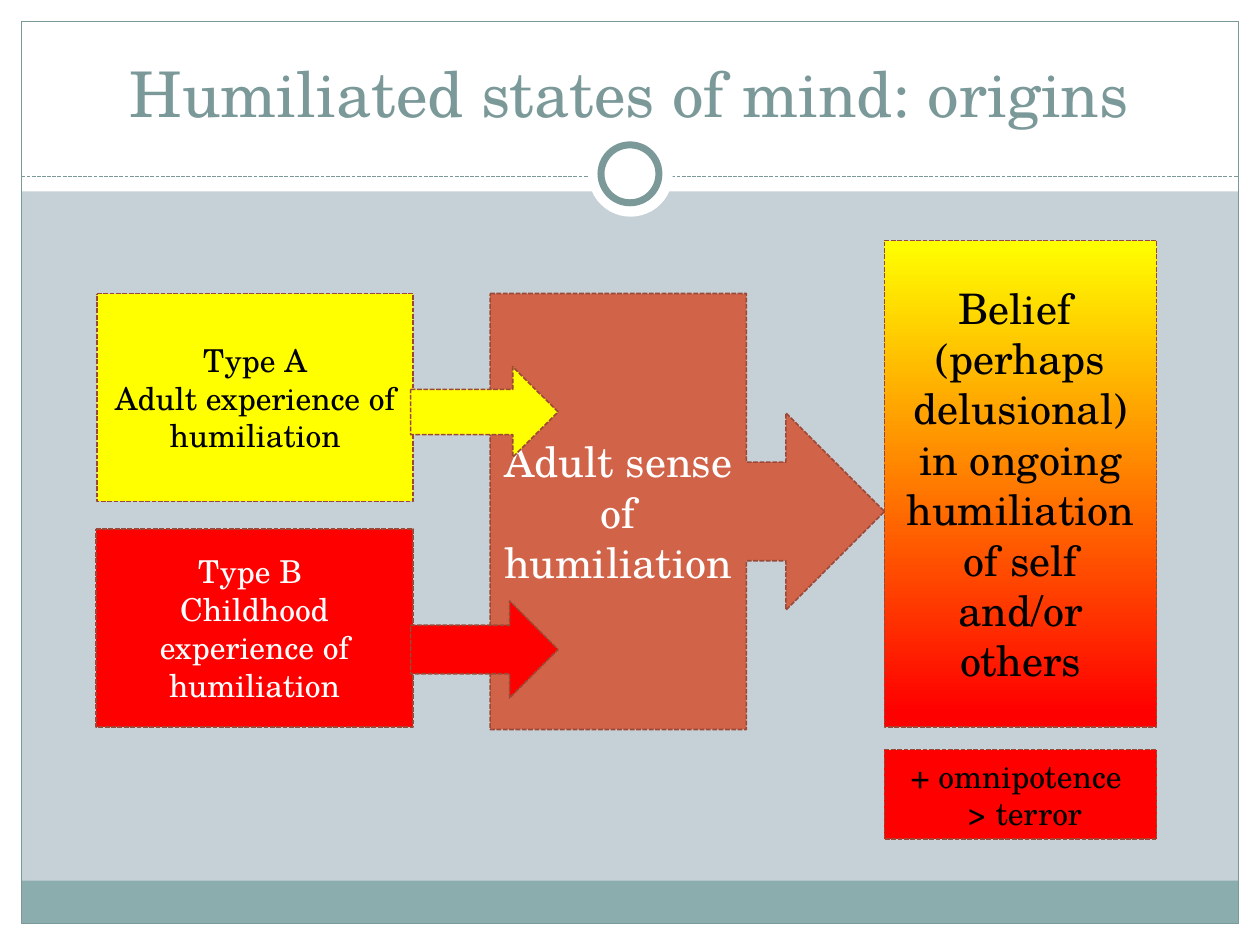
from lxml import etree
from pptx import Presentation
from pptx.dml.color import RGBColor as Rgb
from pptx.enum.dml import MSO_LINE as Dash
from pptx.enum.shapes import MSO_CONNECTOR as Conn, MSO_SHAPE as Geo
from pptx.enum.text import MSO_ANCHOR as Anchor, PP_ALIGN as Align
from pptx.oxml.ns import qn
from pptx.util import Inches, Pt

FONT = "TeX Gyre Schola"
COLORS = {
    "back": "C5D1D7", "white": "FFFFFF", "black": "000000",
    "teal": "7C999A", "band": "8CADAE", "yellow": "FFFF00",
    "red": "FF0000", "rust": "D16349", "edge": "9B4936",
}
WIDTH, HEIGHT, EDGE = 10, 7.5, 0.17


def color(name):
    return Rgb.from_string(COLORS[name])


def set_line(line, name, width, dash=None):
    line.color.rgb = color(name)
    for key, value in {"width": Pt(width), "dash_style": dash}.items():
        setattr(line, key, value)


def add_shape(slide, geo, box, fill=None):
    """Add a plain shape with no line; without a fill name it is hollow."""
    shape = slide.shapes.add_shape(geo, *map(Inches, box))
    shape.shadow.inherit = False
    shape.line.fill.background()
    if fill:
        shape.fill.solid()
        shape.fill.fore_color.rgb = color(fill)
    else:
        shape.fill.background()
    return shape


def add_text(shape, lines, size, name, anchor=Anchor.MIDDLE):
    frame = shape.text_frame
    for key, value in {"word_wrap": True, "vertical_anchor": anchor}.items():
        setattr(frame, key, value)
    frame.text = "\n".join(lines)
    for par in frame.paragraphs:
        par.alignment = Align.CENTER
        font = par.runs[0].font
        for key, value in {"name": FONT, "size": Pt(size)}.items():
            setattr(font, key, value)
        font.color.rgb = color(name)


def add_step(slide, geo, box, fill, lines=(), size=18, ink="black"):
    """Add one dashed part of the flow, with its text if it has any."""
    shape = add_shape(slide, geo, box, fill)
    set_line(shape.line, "edge", 0.9, Dash.SQUARE_DOT)
    if lines:
        add_text(shape, lines, size, ink)
    return shape


def shade(shape, stops):
    """Fill the shape from top to bottom through (position, colour) stops."""
    shape.fill.gradient()
    shape.fill.gradient_angle = 270
    for stop, (place, name) in zip(shape.fill.gradient_stops, stops):
        stop.position = place
        stop.color.rgb = color(name)


def add_rule(slide, y):
    rule = slide.shapes.add_connector(
        Conn.STRAIGHT, *map(Inches, (EDGE, y, WIDTH - EDGE, y)))
    set_line(rule.line, "teal", 0.75, Dash.SQUARE_DOT)
    etree.SubElement(rule.element.spPr, qn("a:effectLst"))


def add_frame(slide):
    """Draw the white margins, bottom band, border, rule and ring."""
    back = slide.background.fill
    back.solid()
    back.fore_color.rgb = color("back")
    for box in ((0, HEIGHT - EDGE, WIDTH, EDGE), (0, 0, WIDTH, 1.52),
                (0, 0, EDGE, HEIGHT), (WIDTH - EDGE, 0, EDGE, HEIGHT)):
        add_shape(slide, Geo.RECTANGLE, box, "white")
    inner = WIDTH - 2 * EDGE
    add_shape(slide, Geo.RECTANGLE, (EDGE, 6.99, inner, 0.34), "band")
    border = add_shape(slide, Geo.RECTANGLE,
                       (EDGE, EDGE, inner, HEIGHT - 2 * EDGE))
    set_line(border.line, "teal", 0.75)
    add_rule(slide, 1.4)
    add_shape(slide, Geo.OVAL, (4.67, 1.05, 0.67, 0.67), "white")
    ring = add_shape(slide, Geo.OVAL, (4.77, 1.15, 0.46, 0.46), "white")
    set_line(ring.line, "teal", 4)


def add_title(slide, text):
    title = slide.shapes.add_textbox(*map(Inches, (0.33, 0.25, 9.33, 0.83)))
    add_text(title, [text], 36, "teal", Anchor.BOTTOM)


def add_flow(slide):
    process = Geo.FLOWCHART_PROCESS
    add_step(slide, process, (0.77, 2.33, 2.51, 1.65), "yellow",
             ["Type A", "Adult experience of humiliation"])
    add_step(slide, process, (0.76, 4.2, 2.52, 1.57), "red",
             ["Type B ", "Childhood experience of humiliation"],
             ink="white")
    add_step(slide, Geo.RIGHT_ARROW_CALLOUT, (3.89, 2.33, 3.13, 3.46), "rust",
             ["Adult sense of humiliation"], 24, "white")
    add_step(slide, Geo.RIGHT_ARROW, (3.26, 2.91, 1.17, 0.72), "yellow")
    add_step(slide, Geo.RIGHT_ARROW, (3.26, 4.77, 1.17, 0.77), "red")
    belief = add_step(
        slide, process, (7.02, 1.91, 2.16, 3.86), "yellow",
        ["Belief ", "(perhaps delusional) in ongoing humiliation of self "
         "and/or others"], 24)
    shade(belief, [(0, "yellow"), (0.97, "red")])
    add_step(slide, process, (7.02, 5.95, 2.16, 0.71), "red",
             ["+ omnipotence ", " > terror"])


def main():
    deck = Presentation()
    deck.slide_width, deck.slide_height = Inches(WIDTH), Inches(HEIGHT)
    slide = deck.slides.add_slide(deck.slide_layouts[6])
    add_frame(slide)
    add_title(slide, "Humiliated states of mind: origins")
    add_flow(slide)
    deck.save("out.pptx")


if __name__ == "__main__":
    main()
